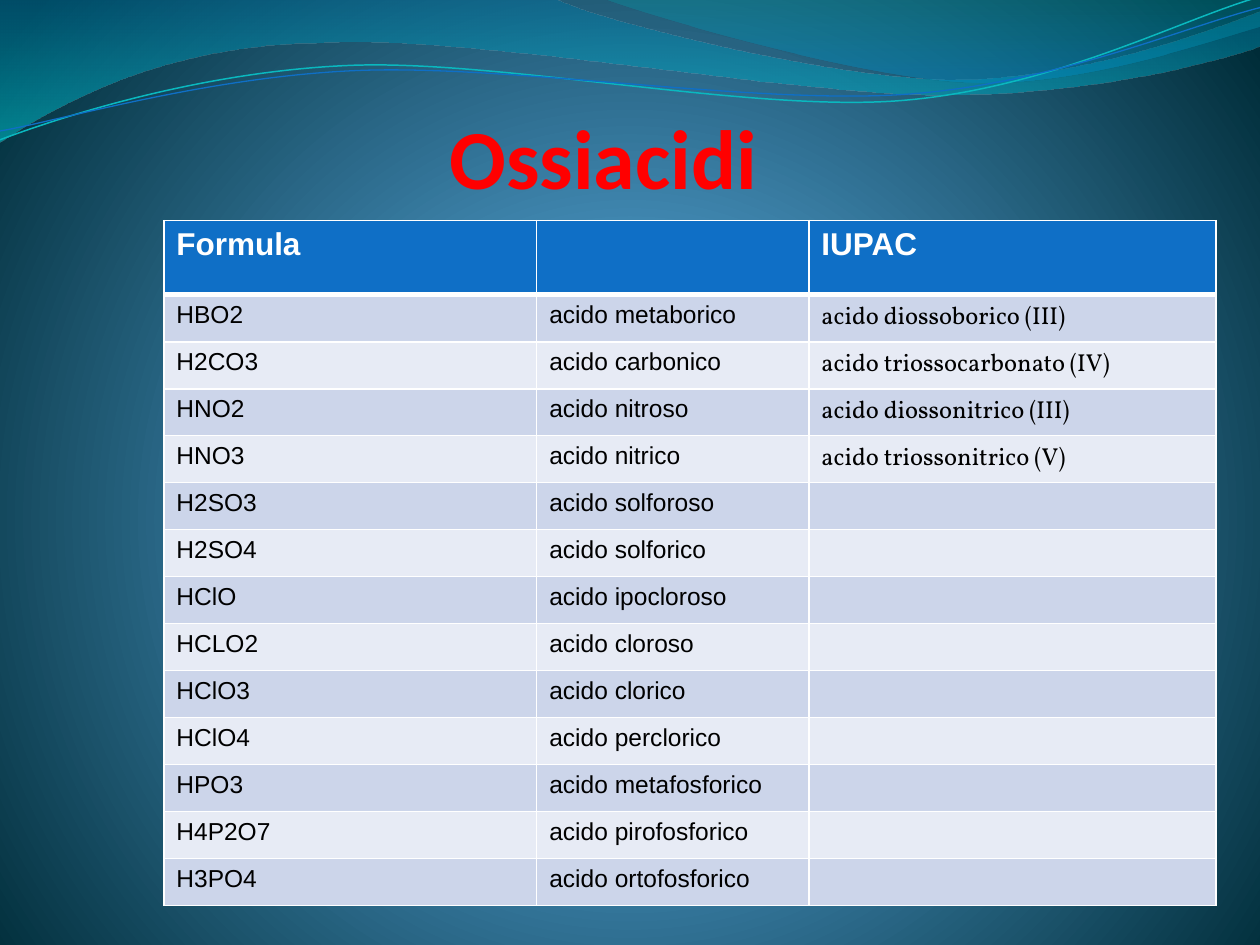
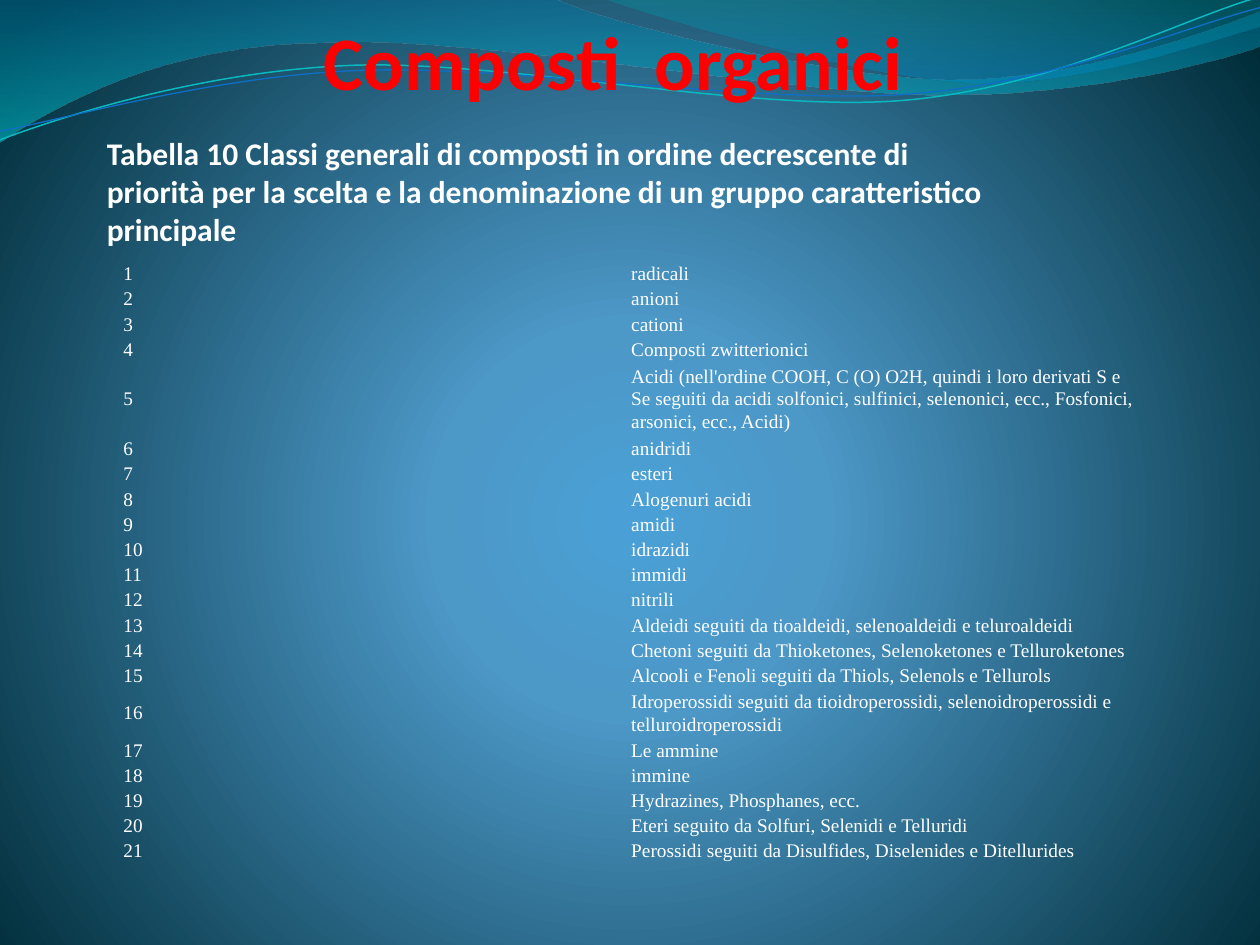
from math import cos, radians, sin

from pptx import Presentation
from pptx.dml.color import RGBColor
from pptx.enum.text import MSO_ANCHOR as Anchor, PP_ALIGN as Align
from pptx.oxml.ns import qn
from pptx.oxml.xmlchemy import OxmlElement as Node
from pptx.util import Inches, Pt

WHITE = RGBColor(0xFF, 0xFF, 0xFF)
BLACK = RGBColor(0x00, 0x00, 0x00)
RED = RGBColor(0xFF, 0x00, 0x00)
BLUE = RGBColor(0x0F, 0x6F, 0xC6)
TEAL = RGBColor(0x0A, 0xB8, 0xBF)
DARK = RGBColor(0xCC, 0xD5, 0xEA)
PALE = RGBColor(0xE7, 0xEB, 0xF5)
SKY = RGBColor(0x4A, 0xA0, 0xD6)
MIST = RGBColor(0x4C, 0x98, 0xC7)
NIGHT = RGBColor(0x00, 0x2C, 0x38)
SEA = RGBColor(0x00, 0x74, 0xA1)
AQUA = RGBColor(0x00, 0xC6, 0xCF)
JADE = RGBColor(0x00, 0xA1, 0xA9)
LAKE = RGBColor(0x00, 0x8B, 0xBF)

PLAIN = "{2D5ABB26-0587-4C30-8999-92F81FD0307C}"
TILT = -2.7

BANDS = [
    ((-0.01, -0.01, 10.02, 1.14),
     [(0, -0.01), (4.4, -0.01),
      (4.76, 0.17, 6.64, 0.63, 7.58, 0.63), (8.53, 0.63, 9.58, 0.26, 10, 0.09),
      (10.01, 0.36),
      (9.83, 0.44, 8.7, 0.76, 7.46, 0.75), (6.22, 0.75, 3.82, 0.28, 2.57, 0.34),
      (1.29, 0.35, 0.46, 0.83, -0.01, 1.13), (0, -0.01)],
     [(0, SEA, 45), (100, AQUA, 55)]),
    ((4.79, -0.01, 5.21, 0.7),
     [(4.79, -0.01),
      (5.09, 0.11, 6.82, 0.62, 7.69, 0.65), (8.56, 0.69, 9.61, 0.32, 10, 0.21),
      (10, 0), (4.79, -0.01)],
     [(0, JADE, 30), (80, LAKE, 45)]),
]
WAVES = [
    ((-0.02, 0.22, 10.02, 0.71),
     [(0, 1.11), (0.48, 0.93, 1.58, 0.57, 2.77, 0.52),
      (3.95, 0.47, 5.93, 0.89, 7.13, 0.8), (8.33, 0.71, 9.38, 0.15, 9.98, -0.02)],
     TEAL, 0.85),
    ((-0.02, 0.3, 10.03, 0.58),
     [(0, 1.04), (0.47, 0.96, 1.64, 0.61, 2.83, 0.56),
      (4.03, 0.51, 5.97, 0.83, 7.17, 0.75), (8.36, 0.67, 9.41, 0.21, 10, 0.06)],
     BLUE, 0.75),
]

ACIDS = [
    ("HBO2", "acido metaborico", "acido diossoborico (III)"),
    ("H2CO3", "acido carbonico", "acido triossocarbonato (IV)"),
    ("HNO2", "acido nitroso", "acido diossonitrico (III)"),
    ("HNO3", "acido nitrico", "acido triossonitrico (V)"),
    ("H2SO3", "acido solforoso", ""),
    ("H2SO4", "acido solforico", ""),
    ("HClO", "acido ipocloroso", ""),
    ("HCLO2", "acido cloroso", ""),
    ("HClO3", "acido clorico", ""),
    ("HClO4", "acido perclorico", ""),
    ("HPO3", "acido metafosforico", ""),
    ("H4P2O7", "acido pirofosforico", ""),
    ("H3PO4", "acido ortofosforico", ""),
]
RANKS = [
    "radicali", "anioni", "cationi", "Composti zwitterionici",
    "Acidi (nell'ordine COOH, C (O) O2H, quindi i loro derivati S e Se seguiti da "
    "acidi solfonici, sulfinici, selenonici, ecc., Fosfonici, arsonici, ecc., Acidi)",
    "anidridi", "esteri", "Alogenuri acidi", "amidi", "idrazidi", "immidi", "nitrili",
    "Aldeidi seguiti da tioaldeidi, selenoaldeidi e teluroaldeidi",
    "Chetoni seguiti da Thioketones, Selenoketones e Telluroketones",
    "Alcooli e Fenoli seguiti da Thiols, Selenols e Tellurols",
    "Idroperossidi seguiti da tioidroperossidi, selenoidroperossidi e "
    "telluroidroperossidi",
    "Le ammine", "immine", "Hydrazines, Phosphanes, ecc.",
    "Eteri seguito da Solfuri, Selenidi e Telluridi",
    "Perossidi seguiti da Disulfides, Diselenides e Ditellurides",
]
TALL = {5: 0.58, 16: 0.39}


def add(host, tag, **attrs):
    node = Node(tag)
    for key, value in attrs.items():
        node.set(key, str(value))
    host.append(node)
    return node


def paint(item, fill, stops, rect=None):
    fill.gradient()
    grad = item.element.find(".//" + qn("a:gradFill"))
    for child in list(grad):
        grad.remove(child)
    group = add(grad, "a:gsLst")
    for pos, color, alpha in stops:
        stop = add(group, "a:gs", pos=pos * 1000)
        tone = add(stop, "a:srgbClr", val=color)
        if alpha < 100:
            add(tone, "a:alpha", val=alpha * 1000)
    if rect:
        way = add(grad, "a:path", path="circle")
        add(way, "a:fillToRect", **rect)
    else:
        add(grad, "a:lin", ang=5400000, scaled=0)


def outline(slide, box, moves, close, turn=0):
    left, top, width, height = box
    pen = slide.shapes.build_freeform(Inches(left), Inches(top))
    pen.add_line_segments([(Inches(left + width), Inches(top + height))], close=False)
    shape = pen.convert_to_shape()
    shape.shadow.inherit = False
    shape.rotation = turn
    angle = radians(-turn)
    track = shape.element.find(".//" + qn("a:path"))
    for child in list(track):
        track.remove(child)
    for index, move in enumerate(moves):
        kind = "cubicBezTo" if len(move) > 2 else "lnTo" if index else "moveTo"
        step = add(track, "a:" + kind)
        for x, y in zip(move[::2], move[1::2]):
            dx, dy = x - left - width / 2, y - top - height / 2
            add(step, "a:pt",
                x=int(Inches(width / 2 + dx * cos(angle) - dy * sin(angle))),
                y=int(Inches(height / 2 + dx * sin(angle) + dy * cos(angle))))
    if close:
        add(track, "a:close")
    return shape


def add_waves(slide, master):
    shapes = []
    for box, moves, stops in BANDS:
        band = outline(slide, box, moves, True)
        paint(band, band.fill, stops)
        band.line.fill.background()
        shapes.append(band)
    for box, moves, color, width in WAVES:
        wave = outline(slide, box, moves, False, TILT)
        wave.fill.background()
        wave.line.color.rgb = color
        wave.line.width = Pt(width)
        shapes.append(wave)
    tree = master.shapes.element if hasattr(master.shapes, "element") else master.shapes._spTree
    for index, shape in enumerate(shapes):
        shape.element.find(".//" + qn("p:cNvPr")).set("id", str(101 + index))
        tree.insert(2 + index, shape.element)


def style(frame, text, name, size, color, bold=False):
    frame.text = text
    para = frame.paragraphs[0]
    for run in para.runs:
        font = run.font
        font.name, font.size, font.bold = name, Pt(size), bold
        font.color.rgb = color
    if not text:
        add(para._p, "a:endParaRPr", sz=size * 100)
    return para


def add_text(slide, box, text, size, color, anchor):
    frame = slide.shapes.add_textbox(*map(Inches, box)).text_frame
    frame.word_wrap = True
    frame.vertical_anchor = anchor
    para = style(frame, text, "Calibri", size, color, True)
    return frame, para


def add_title(slide, text, size, height):
    frame, para = add_text(slide, (0.58, 0.62, 8.59, height), text, size, RED,
                           Anchor.BOTTOM)
    frame.margin_left = frame.margin_top = frame.margin_bottom = 0
    frame.margin_right = Inches(0.02)
    para.alignment = Align.CENTER


def add_grid(slide, left, top, widths, heights):
    frame = slide.shapes.add_table(
        len(heights), len(widths), Inches(left), Inches(top),
        Inches(sum(widths)), Inches(sum(heights)))
    frame.element.find(".//" + qn("a:tableStyleId")).text = PLAIN
    table = frame.table
    table.first_row = table.horz_banding = False
    for column, width in zip(table.columns, widths):
        column.width = Inches(width)
    for row, height in zip(table.rows, heights):
        row.height = Inches(height)
    return table


def edge(cell, row):
    thick = {0: "B", 1: "T"}.get(row)
    props = cell._tc.get_or_add_tcPr()
    for side in "LRTB":
        line = add(props, "a:ln" + side, w=Pt(3 if side == thick else 1))
        add(add(line, "a:solidFill"), "a:srgbClr", val=WHITE)


def add_acids(slide, left, top):
    heights = [0.59] + [4.85 / len(ACIDS)] * len(ACIDS)
    table = add_grid(slide, left, top, (2.96, 2.16, 3.23), heights)
    for r, texts in enumerate([("Formula", "", "IUPAC")] + ACIDS):
        for c, text in enumerate(texts):
            cell = table.cell(r, c)
            edge(cell, r)
            cell.fill.solid()
            if r == 0:
                cell.fill.fore_color.rgb = BLUE
                style(cell.text_frame, text, "Arial", 18, WHITE, True)
            else:
                cell.fill.fore_color.rgb = DARK if r % 2 else PALE
                name = "Vollkorn" if c == 2 else "Arial"
                style(cell.text_frame, text, name, 14, BLACK)


def add_ranks(slide, left, top):
    heights = [TALL.get(n, 0.2) for n in range(1, len(RANKS) + 1)]
    table = add_grid(slide, left, top, (4.03, 4.03), heights)
    for r, rank in enumerate(RANKS):
        for c, text in enumerate((str(r + 1), rank)):
            cell = table.cell(r, c)
            cell.fill.background()
            cell.vertical_anchor = Anchor.MIDDLE
            cell.margin_left = cell.margin_right = Inches(0.01)
            cell.margin_top = cell.margin_bottom = 0
            para = style(cell.text_frame, text, "Times New Roman", 11, WHITE)
            para.line_spacing = 1.07


def acid_slide(slide):
    add_title(slide, "Ossiacidi ", 48, 1.02)
    add_acids(slide, 1.3, 1.75)


def rank_slide(slide):
    add_title(slide, "Composti  organici", 43.2, 0.22)
    add_ranks(slide, 0.97, 2.07)
    add_text(slide, (0.75, 1.01, 7.26, 1.01),
             "Tabella 10 Classi generali di composti in ordine decrescente di priorità "
             "per la scelta e la denominazione di un gruppo caratteristico principale",
             18, WHITE, Anchor.MIDDLE)


def main():
    deck = Presentation()
    deck.slide_width, deck.slide_height = Inches(10), Inches(7.5)
    master = deck.slide_master
    paint(master, master.background.fill,
          [(0, SKY, 100), (25, MIST, 100), (100, NIGHT, 100)],
          dict(l=10000, t=110000, r=10000, b=100000))
    first, second = [deck.slides.add_slide(deck.slide_layouts[6]) for _ in range(2)]
    add_waves(first, master)
    acid_slide(first)
    rank_slide(second)
    deck.save("out.pptx")


if __name__ == "__main__":
    main()
